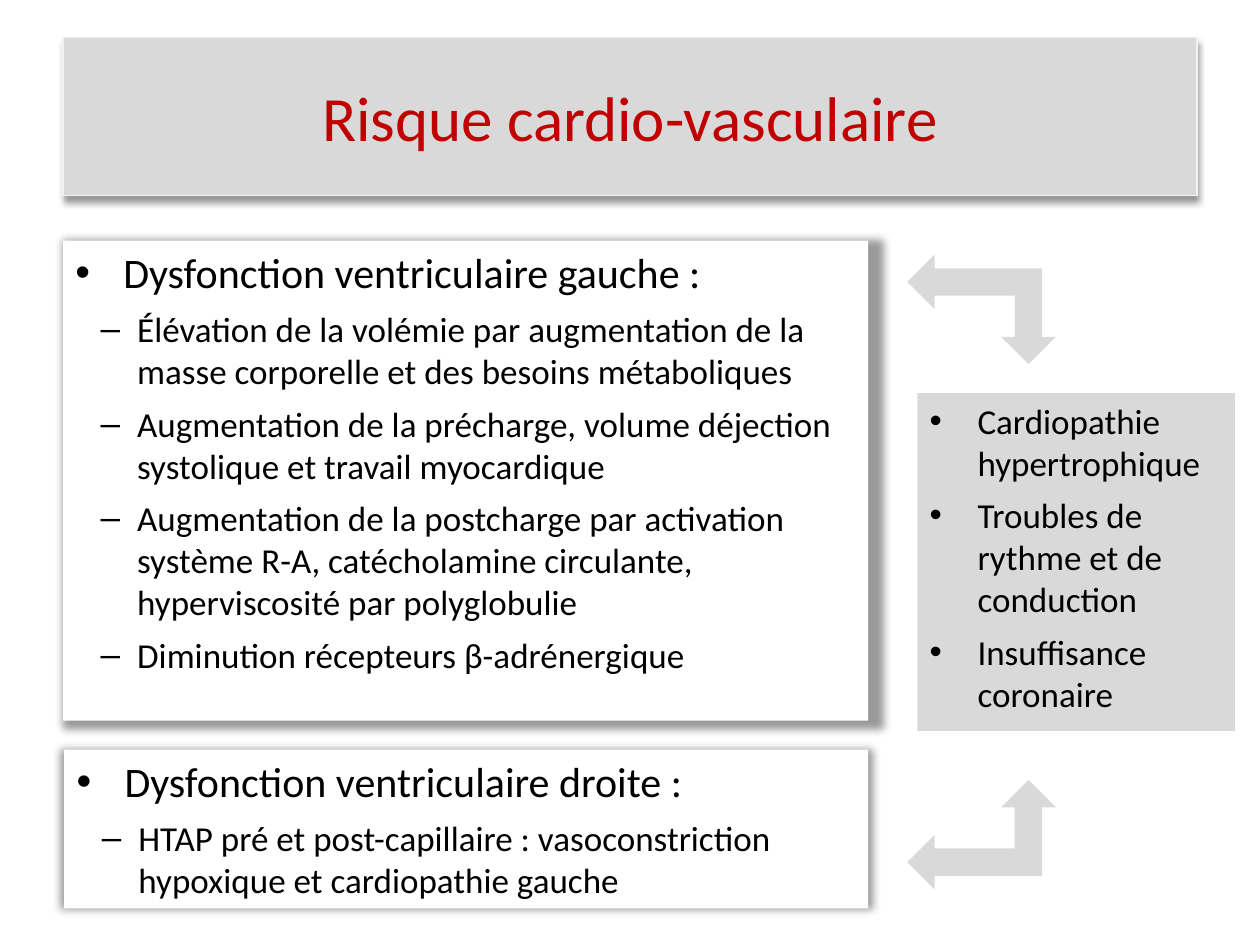
from lxml.etree import SubElement
from pptx import Presentation
from pptx.dml.color import RGBColor
from pptx.enum.shapes import MSO_SHAPE
from pptx.enum.text import MSO_ANCHOR, MSO_AUTO_SIZE, PP_ALIGN
from pptx.oxml.ns import qn
from pptx.util import Pt

EMU_PER_PX = 9144
FONT = "Calibri"
GREY = RGBColor(0xD9, 0xD9, 0xD9)
PALE_GREY = RGBColor(0xF2, 0xF2, 0xF2)
WHITE = RGBColor(0xFF, 0xFF, 0xFF)
BLACK = RGBColor(0x00, 0x00, 0x00)
RED = RGBColor(0xC0, 0x00, 0x00)

TITLE_BOX = (50, 30, 900, 125)
LEFT_VENTRICLE_BOX = (50, 191, 639, 381)
RIGHT_VENTRICLE_BOX = (51, 595, 638, 126)
CONSEQUENCES_BOX = (728, 312, 252, 268)
UPPER_ARROW_BOX = (720, 202, 118, 87)
LOWER_ARROW_BOX = (720, 619, 118, 87)

LEFT_VENTRICLE_CAUSES = [
    "Élévation de la volémie par augmentation de la masse corporelle et des besoins métaboliques",
    "Augmentation de la précharge, volume déjection systolique et travail myocardique",
    "Augmentation de la postcharge par activation système R-A, catécholamine circulante, "
    "hyperviscosité par polyglobulie",
    "Diminution récepteurs β-adrénergique",
]
RIGHT_VENTRICLE_CAUSES = [
    "HTAP pré et post-capillaire : vasoconstriction hypoxique et cardiopathie gauche",
]
CONSEQUENCES = [
    "Cardiopathie hypertrophique",
    "Troubles de rythme et de conduction",
    "Insuffisance coronaire",
]


def px(length):
    return length * EMU_PER_PX


def add_shadow(shape, blur, distance=0, direction=0, scale=100, align="ctr"):
    shape.shadow.inherit = False
    effects = shape._element.spPr.find(qn("a:effectLst"))
    shadow = SubElement(
        effects, qn("a:outerShdw"), blurRad=str(Pt(blur)), dist=str(Pt(distance)),
        dir=str(direction * 60000), sx=str(scale * 1000), sy=str(scale * 1000),
        algn=align, rotWithShape="0")
    color = SubElement(shadow, qn("a:srgbClr"), val=str(BLACK))
    SubElement(color, qn("a:alpha"), val="40000")


def write_text(paragraph, text, size, color=BLACK, align=PP_ALIGN.LEFT,
               bullet=None, indent=0, hanging=0, level=0, space_before=0):
    paragraph.alignment = align
    paragraph.level = level
    paragraph.space_before = Pt(space_before)
    if bullet:
        properties = paragraph._p.get_or_add_pPr()
        properties.set("marL", str(px(indent)))
        properties.set("indent", str(px(-hanging)))
        SubElement(properties, qn("a:buFont"), typeface="Arial")
        SubElement(properties, qn("a:buChar"), char=bullet)
    run = paragraph.add_run()
    run.text = text
    run.font.name = FONT
    run.font.size = Pt(size)
    run.font.color.rgb = color


def add_shape(slide, kind, box, fill):
    shape = slide.shapes.add_shape(kind, *map(px, box))
    shape.shadow.inherit = False
    shape.fill.solid()
    shape.fill.fore_color.rgb = fill
    shape.line.fill.background()
    return shape


def place_title(slide, box, text):
    title = slide.shapes.title
    title.left, title.top, title.width, title.height = map(px, box)
    title.fill.solid()
    title.fill.fore_color.rgb = GREY
    title.line.color.rgb = PALE_GREY
    title.line.width = Pt(0.75)
    add_shadow(title, blur=4, distance=3, direction=90)
    frame = title.text_frame
    frame.auto_size = MSO_AUTO_SIZE.NONE
    frame.vertical_anchor = MSO_ANCHOR.MIDDLE
    write_text(frame.paragraphs[0], text, 36, color=RED, align=PP_ALIGN.CENTER)


def add_list_box(slide, box, items, fill, heading=None):
    shape = add_shape(slide, MSO_SHAPE.RECTANGLE, box, fill)
    frame = shape.text_frame
    frame.word_wrap = True
    frame.vertical_anchor = MSO_ANCHOR.TOP
    top_format = dict(bullet="•", indent=38, hanging=38, space_before=6)
    nested_format = dict(bullet="–", indent=49, hanging=29, level=1, space_before=6)
    entries = [(item, 20, nested_format if heading else top_format) for item in items]
    if heading:
        entries.insert(0, (heading, 24, top_format))
    for index, (text, size, text_format) in enumerate(entries):
        paragraph = frame.add_paragraph() if index else frame.paragraphs[0]
        write_text(paragraph, text, size, **text_format)
    return shape


def add_corner_arrow(slide, box, flipped=False):
    arrow = add_shape(slide, MSO_SHAPE.LEFT_UP_ARROW, box, GREY)
    if flipped:
        arrow.rotation = 180
        arrow._element.spPr.xfrm.set("flipH", "1")


def main():
    presentation = Presentation()
    presentation.slide_width = px(1000)
    presentation.slide_height = px(750)
    slide = presentation.slides.add_slide(presentation.slide_layouts[5])

    place_title(slide, TITLE_BOX, "Risque cardio-vasculaire")
    left_ventricle = add_list_box(slide, LEFT_VENTRICLE_BOX, LEFT_VENTRICLE_CAUSES, WHITE,
                                  heading="Dysfonction ventriculaire gauche :")
    add_shadow(left_ventricle, blur=5, scale=102, align="tl")
    add_list_box(slide, CONSEQUENCES_BOX, CONSEQUENCES, GREY)
    right_ventricle = add_list_box(slide, RIGHT_VENTRICLE_BOX, RIGHT_VENTRICLE_CAUSES, WHITE,
                                   heading="Dysfonction ventriculaire droite :")
    add_shadow(right_ventricle, blur=5, scale=101)
    add_corner_arrow(slide, LOWER_ARROW_BOX)
    add_corner_arrow(slide, UPPER_ARROW_BOX, flipped=True)

    presentation.save("out.pptx")


if __name__ == "__main__":
    main()
